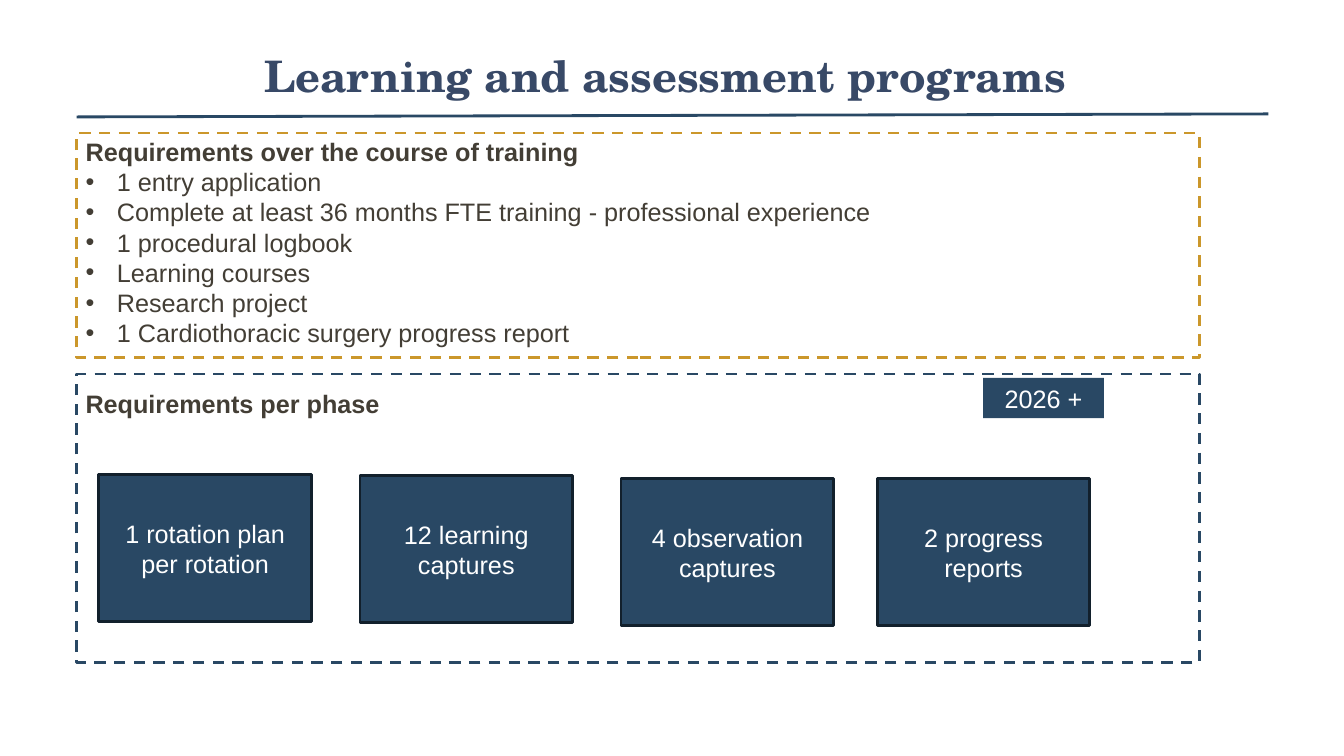
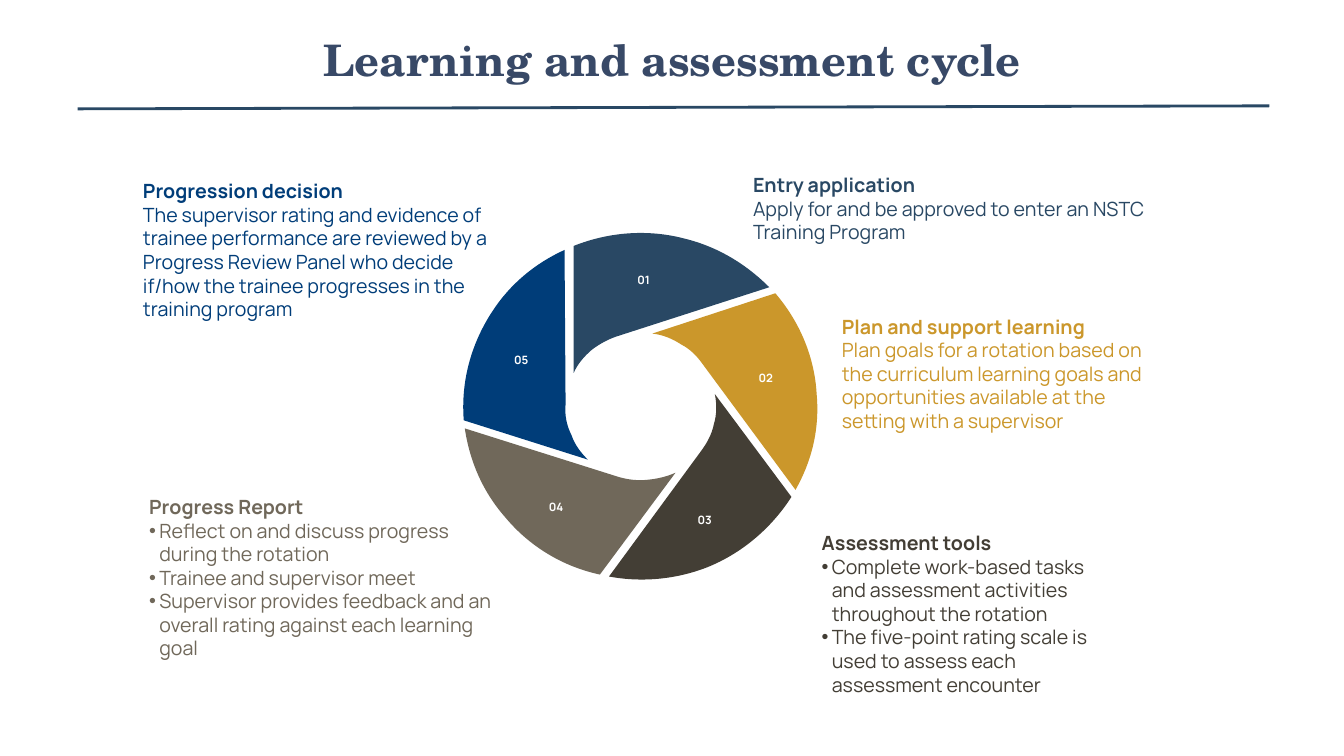
from dataclasses import dataclass
from typing import Any, NamedTuple, Optional

from lxml import etree
from pptx import Presentation
from pptx import util as u
from pptx.dml.color import RGBColor
from pptx.enum import dml, shapes, text
from pptx.oxml import ns

COLORS = {
    "navy": "294864", "title": "384967", "gold": "CB972B", "dark": "433E35",
    "taupe": "70685A", "blue": "003D79", "edge": "12202C", "white": "FFFFFF",
}
ARIAL, MANROPE, SCHOLA = "Arial", "Manrope", "TeX Gyre Schola"
LEFT, CENTER = text.PP_ALIGN.LEFT, text.PP_ALIGN.CENTER
TOP, MIDDLE = text.MSO_ANCHOR.TOP, text.MSO_ANCHOR.MIDDLE


class Frame(NamedTuple):
    left: float
    top: float
    width: float
    height: float


class TextStyle(NamedTuple):
    font: str
    size: float
    color: str
    align: Any = LEFT
    anchor: Any = TOP
    inset: tuple[float, float] = (0.1, 0.05)
    wrap: bool = True
    indent: float = 0


@dataclass
class Segment:
    number: str
    label: Frame
    color: str
    frame: Frame
    start: tuple[float, float]
    steps: list[tuple[float, ...]]


@dataclass
class Stage:
    heading: str
    details: list[str]
    frame: Frame
    color: str
    indent: float = 0
    inset: tuple[float, float] = (0.1, 0.05)
    placeholder: Optional[int] = None


TITLE = TextStyle(SCHOLA, 31, "title", CENTER, MIDDLE, (0.07, 0.04))
CARD = TextStyle(ARIAL, 18, "white", CENTER, MIDDLE)
REQUIREMENT = TextStyle(ARIAL, 18, "dark", indent=0.31)
NUMBER = TextStyle(MANROPE, 8.2, "white", CENTER, MIDDLE, wrap=False)

REQUIREMENTS = [
    "1 entry application",
    "Complete at least 36 months FTE training - professional experience",
    "1 procedural logbook",
    "Learning courses",
    "Research project",
    "1 Cardiothoracic surgery progress report",
]
PHASE_CARDS = [
    ("1 rotation plan per rotation", 0.98, 4.71),
    ("12 learning captures", 3.57, 4.72),
    ("4 observation captures", 6.16, 4.75),
    ("2 progress reports", 8.7, 4.75),
]
SEGMENTS = [
    Segment("01", Frame(6.2, 2.65, 0.37, 0.26), "navy",
            Frame(5.69, 2.31, 1.94, 1.39), (7.63, 2.85), [
        (7.4, 2.62, 7.12, 2.45, 6.8, 2.37), (6.43, 2.27, 6.04, 2.3, 5.69, 2.44),
        (5.69, 3.7), (5.73, 3.61, 5.79, 3.54, 5.87, 3.47),
        (5.95, 3.41, 6.04, 3.36, 6.14, 3.33), (7.63, 2.85)]),
    Segment("02", Frame(7.4, 3.62, 0.39, 0.26), "gold",
            Frame(6.47, 2.91, 1.64, 1.94), (6.47, 3.31), [
        (7.69, 2.91), (7.93, 3.19, 8.08, 3.54, 8.1, 3.91),
        (8.13, 4.24, 8.06, 4.56, 7.89, 4.86), (6.96, 3.6),
        (6.91, 3.53, 6.84, 3.46, 6.76, 3.42), (6.67, 3.36, 6.57, 3.32, 6.47, 3.31)]),
    Segment("03", Frame(6.79, 5.03, 0.4, 0.26), "dark",
            Frame(6.04, 3.91, 1.81, 1.84), (7.09, 3.91), [
        (7.85, 4.93), (7.65, 5.24, 7.36, 5.49, 7.01, 5.63),
        (6.7, 5.75, 6.36, 5.78, 6.04, 5.72), (6.95, 4.48),
        (7.01, 4.4, 7.06, 4.31, 7.08, 4.21), (7.11, 4.11, 7.11, 4.01, 7.09, 3.91)]),
    Segment("04", Frame(5.31, 4.9, 0.41, 0.26), "taupe",
            Frame(4.61, 4.25, 2.08, 1.45), (6.7, 4.69), [
        (5.95, 5.7), (5.58, 5.62, 5.25, 5.42, 5.01, 5.13),
        (4.79, 4.88, 4.66, 4.58, 4.61, 4.25), (6.13, 4.73),
        (6.23, 4.76, 6.33, 4.77, 6.42, 4.76), (6.52, 4.75, 6.61, 4.73, 6.7, 4.69)]),
    Segment("05", Frame(4.97, 3.44, 0.4, 0.26), "blue",
            Frame(4.6, 2.48, 1.23, 2.08), (5.6, 2.48), [
        (5.31, 2.61, 5.06, 2.82, 4.89, 3.08), (4.67, 3.41, 4.57, 3.79, 4.6, 4.17),
        (5.83, 4.56), (5.76, 4.49, 5.7, 4.41, 5.67, 4.32),
        (5.62, 4.22, 5.6, 4.12, 5.61, 4.01), (5.6, 2.48)]),
]
STAGES = [
    Stage("Entry application",
          ["Apply for and be approved to enter an NSTC Training Program"],
          Frame(7.37, 1.67, 4.15, 0.86), "navy"),
    Stage("Plan and support learning",
          ["Plan goals for a rotation based on the curriculum learning goals and "
           "opportunities available at the setting with a supervisor"],
          Frame(8.29, 3.09, 3.39, 1.23), "gold", inset=(0.06, 0.03)),
    Stage("Assessment tools",
          ["Complete work-based tasks and assessment activities throughout the rotation",
           "The five-point rating scale is used to assess each assessment encounter"],
          Frame(8.05, 5.22, 2.98, 1.99), "dark", indent=0.1, placeholder=2),
    Stage("Progress Report",
          ["Reflect on and discuss progress during the rotation",
           "Trainee and supervisor meet",
           "Supervisor provides feedback and an overall rating against each learning goal"],
          Frame(1.38, 4.86, 3.65, 1.75), "taupe", indent=0.1, placeholder=1),
    Stage("Progression decision",
          ["The supervisor rating and evidence of trainee performance are reviewed by a "
           "Progress Review Panel who decide if/how the trainee progresses in the "
           "training program"],
          Frame(1.32, 1.73, 3.63, 2.13), "blue"),
]


def rgb(name: str) -> RGBColor:
    return RGBColor.from_string(COLORS[name])


def apply(target: Any, values: dict[str, Any]) -> None:
    for key, value in values.items():
        setattr(target, key, value)


def place(shape: Any, frame: Frame) -> None:
    apply(shape, {key: u.Inches(value) for key, value in frame._asdict().items()})


def set_bullet(paragraph: Any, indent: float) -> None:
    props = paragraph._p.get_or_add_pPr()
    props.set("marL", str(u.Inches(indent)))
    props.set("indent", str(-u.Inches(indent)))
    if indent:
        etree.SubElement(props, ns.qn("a:buFont")).set("typeface", ARIAL)
        etree.SubElement(props, ns.qn("a:buChar")).set("char", "•")
    else:
        etree.SubElement(props, ns.qn("a:buNone"))


def write(shape: Any, style: TextStyle, heading: str = "",
          details: Optional[list[str]] = None) -> None:
    across, down = (u.Inches(value) for value in style.inset)
    frame = shape.text_frame
    apply(frame, {
        "word_wrap": style.wrap, "auto_size": text.MSO_AUTO_SIZE.NONE,
        "vertical_anchor": style.anchor, "margin_left": across,
        "margin_right": across, "margin_top": down, "margin_bottom": down,
    })
    lines = [(heading, True)] if heading else []
    lines += [(detail, False) for detail in details or []]
    for index, (content, bold) in enumerate(lines):
        paragraph = frame.add_paragraph() if index else frame.paragraphs[0]
        apply(paragraph, {"alignment": style.align, "space_before": u.Pt(0),
                          "space_after": u.Pt(0)})
        set_bullet(paragraph, 0 if bold else style.indent)
        run = paragraph.add_run()
        run.text = content
        apply(run.font, {"name": style.font, "size": u.Pt(style.size), "bold": bold})
        run.font.color.rgb = rgb(style.color)


def add_text(slide: Any, frame: Frame, style: TextStyle, heading: str = "",
             details: Optional[list[str]] = None) -> None:
    box = slide.shapes.add_textbox(*(u.Inches(value) for value in frame))
    write(box, style, heading, details)


def paint(shape: Any, fill: str = "", line: str = "", dashed: bool = False) -> None:
    shape.shadow.inherit = False
    if fill:
        shape.fill.solid()
        shape.fill.fore_color.rgb = rgb(fill)
    else:
        shape.fill.background()
    if line:
        shape.line.color.rgb = rgb(line)
        shape.line.width = u.Pt(2)
    else:
        shape.line.fill.background()
    if dashed:
        shape.line.dash_style = dml.MSO_LINE.DASH


def add_box(slide: Any, frame: Frame, fill: str = "", line: str = "",
            dashed: bool = False) -> Any:
    box = slide.shapes.add_shape(shapes.MSO_SHAPE.RECTANGLE,
                                 *(u.Inches(value) for value in frame))
    paint(box, fill, line, dashed)
    return box


def add_header(slide: Any, title: str, frame: Frame, rule_left: float,
               rule_top: float) -> None:
    place(slide.shapes.title, frame)
    write(slide.shapes.title, TITLE, title)
    ends = (rule_left, rule_top, rule_left + 11.82, rule_top - 0.03)
    rule = slide.shapes.add_connector(shapes.MSO_CONNECTOR.STRAIGHT,
                                      *(u.Inches(value) for value in ends))
    rule.line.color.rgb = rgb("navy")
    rule.line.width = u.Pt(2)
    etree.SubElement(rule._element.spPr, ns.qn("a:effectLst"))


def add_segment(slide: Any, segment: Segment) -> None:
    corners = [(u.Inches(step[-2]), u.Inches(step[-1])) for step in segment.steps]
    outline = slide.shapes.build_freeform(*(u.Inches(value) for value in segment.start))
    outline.add_line_segments(corners, close=True)
    blade = outline.convert_to_shape()
    place(blade, segment.frame)
    paint(blade, segment.color)
    curve = next(blade._element.iter(ns.qn("a:path")))
    curve.set("w", str(u.Inches(segment.frame.width)))
    curve.set("h", str(u.Inches(segment.frame.height)))
    for move, step in zip(list(curve), [segment.start, *segment.steps]):
        for point in list(move):
            move.remove(point)
        if len(step) == 6:
            move.tag = ns.qn("a:cubicBezTo")
        for x, y in zip(step[::2], step[1::2]):
            point = etree.SubElement(move, ns.qn("a:pt"))
            point.set("x", str(u.Inches(x - segment.frame.left)))
            point.set("y", str(u.Inches(y - segment.frame.top)))


def build_programs(deck: Any) -> None:
    slide = deck.slides.add_slide(deck.slide_layouts[1])
    add_header(slide, "Learning and assessment programs",
               Frame(1.59, 0.29, 10.01, 0.91), 0.76, 1.16)
    add_box(slide, Frame(0.76, 1.32, 11.14, 2.23), line="gold", dashed=True)
    add_box(slide, Frame(0.76, 3.71, 11.14, 2.86), line="navy", dashed=True)
    training = slide.placeholders[1]
    place(training, Frame(0.75, 1.3, 9.84, 2.22))
    write(training, REQUIREMENT, "Requirements over the course of training", REQUIREMENTS)
    add_text(slide, Frame(0.75, 3.8, 6.67, 0.4), REQUIREMENT, "Requirements per phase")
    year = add_box(slide, Frame(9.75, 3.75, 1.2, 0.4), "navy")
    write(year, CARD, details=["2026 +"])
    for content, left, top in PHASE_CARDS:
        card = add_box(slide, Frame(left, top, 2.11, 1.46), "navy", "edge")
        write(card, CARD, details=[content])


def build_cycle(deck: Any) -> None:
    slide = deck.slides.add_slide(deck.slide_layouts[3])
    add_header(slide, "Learning and assessment cycle",
               Frame(1.64, 0.29, 10.05, 0.59), 0.77, 1.08)
    for segment in SEGMENTS:
        add_segment(slide, segment)
    for segment in SEGMENTS:
        add_text(slide, segment.label, NUMBER, segment.number)
    for stage in STAGES:
        style = TextStyle(MANROPE, 14, stage.color, inset=stage.inset,
                          indent=stage.indent)
        if stage.placeholder is None:
            add_text(slide, stage.frame, style, stage.heading, stage.details)
        else:
            body = slide.placeholders[stage.placeholder]
            place(body, stage.frame)
            write(body, style, stage.heading, stage.details)


def main() -> None:
    deck = Presentation()
    apply(deck, {"slide_width": u.Inches(13.33), "slide_height": u.Inches(7.5)})
    build_programs(deck)
    build_cycle(deck)
    deck.save("out.pptx")


if __name__ == "__main__":
    main()
